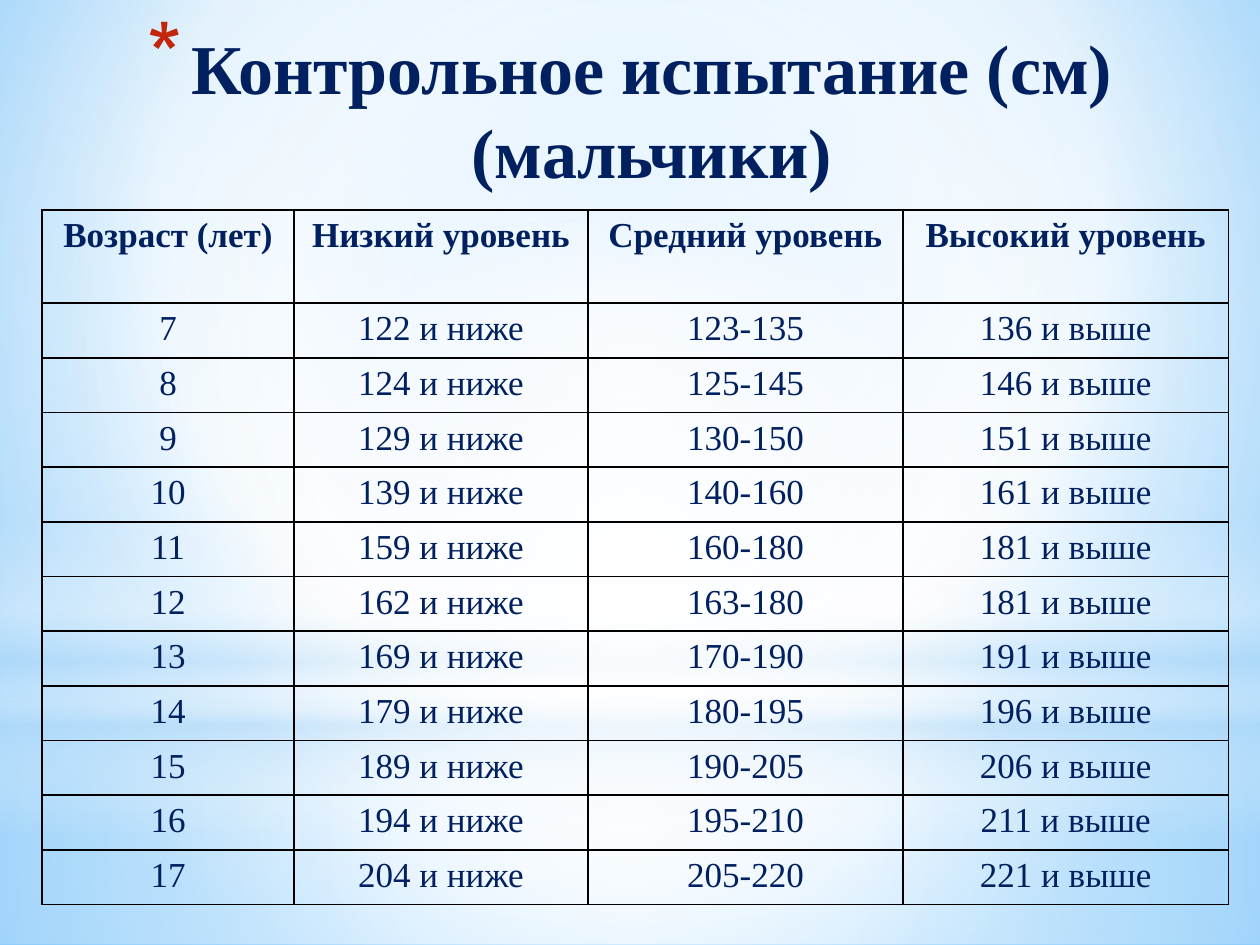
from dataclasses import dataclass
from typing import Any, NamedTuple

from pptx import Presentation
from pptx.dml.color import RGBColor as RGB
from pptx.enum.shapes import MSO_SHAPE as Kind
from pptx.enum.text import MSO_ANCHOR as Anchor, PP_ALIGN as Align
from pptx.oxml import parse_xml
from pptx.oxml.ns import nsdecls, qn
from pptx.util import Pt


@dataclass(frozen=True)
class Theme:
    font: str = "Times New Roman"
    ink: str = "002060"
    star: str = "C3260C"
    rule: str = "000000"
    white: str = "FFFFFF"
    sky: str = "B4DCFA"
    rim: str = "9ED5FF"
    deep: str = "5BB9FF"
    head: int = 40
    body: int = 20


class Stop(NamedTuple):
    pos: int
    tint: str
    alpha: int = 100


class Glow(NamedTuple):
    stops: list[Stop]
    focus: tuple[int, ...] = (50, 50, 50, 50)
    angle: int | None = None


class Layer(NamedTuple):
    kind: Kind
    top: float
    high: float
    glow: Glow


class Level(NamedTuple):
    age: int
    low: int
    high: int

    def texts(self) -> list[str]:
        return [str(self.age), f"{self.low} и ниже",
                f"{self.low + 1}-{self.high - 1}", f"{self.high} и выше"]


T = Theme()
WIDE, HIGH = 720, 540

BACK = Glow([Stop(0, T.rim), Stop(60, T.white), Stop(100, T.deep)],
            (20, 10, 20, 60))
LAYERS = [
    Layer(Kind.RECTANGLE, 402, 138, Glow([
        Stop(0, T.white, 91), Stop(37, T.white, 76), Stop(100, T.sky, 79)])),
    Layer(Kind.RECTANGLE, 0, 402, Glow([
        Stop(0, T.white, 89), Stop(48, T.white, 62), Stop(100, T.sky, 79)])),
    Layer(Kind.RECTANGLE, 297, 180, Glow([
        Stop(0, T.white, 0), Stop(29, T.white, 30), Stop(45, T.sky, 40),
        Stop(55, T.white, 26), Stop(65, T.sky, 60), Stop(100, T.white, 0)],
        angle=90)),
    Layer(Kind.OVAL, 126, 402, Glow([Stop(0, T.white), Stop(56, T.white, 0)])),
]

HEADS = ["Возраст (лет)", "Низкий уровень", "Средний уровень", "Высокий уровень"]
LEVELS = [
    Level(7, 122, 136), Level(8, 124, 146), Level(9, 129, 151),
    Level(10, 139, 161), Level(11, 159, 181), Level(12, 162, 181),
    Level(13, 169, 191), Level(14, 179, 196), Level(15, 189, 206),
    Level(16, 194, 211), Level(17, 204, 221),
]
COLS = [144, 168, 180, 186]
ROWS = [53.25] + [31.2] * len(LEVELS)


def put(item: Any, form: dict[str, Any]) -> None:
    for name, value in form.items():
        setattr(item, name, value)


def blend(fill: Any, root: Any, glow: Glow) -> None:
    """Give the fill under root a gradient."""
    fill.solid()
    stops = "".join(
        f'<a:gs pos="{s.pos * 1000}"><a:srgbClr val="{s.tint}">'
        f'<a:alpha val="{s.alpha * 1000}"/></a:srgbClr></a:gs>'
        for s in glow.stops)
    if glow.angle is None:
        sides = " ".join(f'{side}="{n * 1000}"'
                         for side, n in zip("ltrb", glow.focus))
        shade = f'<a:path path="circle"><a:fillToRect {sides}/></a:path>'
    else:
        shade = f'<a:lin ang="{glow.angle * 60000}" scaled="0"/>'
    old = root.find(".//" + qn("a:solidFill"))
    old.getparent().replace(old, parse_xml(
        f'<a:gradFill {nsdecls("a")} rotWithShape="1">'
        f'<a:gsLst>{stops}</a:gsLst>{shade}</a:gradFill>'))


def write(frame: Any, text: str, size: int, bold: bool, hang: float) -> Any:
    """Set one centred paragraph with a hanging indent."""
    para = frame.paragraphs[0]
    para.alignment = Align.CENTER
    run = para.add_run()
    run.text = text
    put(run.font, {"name": T.font, "size": Pt(size), "bold": bold})
    run.font.color.rgb = RGB.from_string(T.ink)
    props = para._p.get_or_add_pPr()
    props.set("marL", str(Pt(hang)))
    props.set("indent", str(-Pt(hang)))
    return props


def paint(slide: Any, layer: Layer) -> None:
    shape = slide.shapes.add_shape(
        layer.kind, 0, Pt(layer.top), Pt(WIDE), Pt(layer.high))
    shape.shadow.inherit = False
    shape.line.fill.background()
    blend(shape.fill, shape.element, layer.glow)


def title(slide: Any, text: str) -> None:
    box = slide.shapes.add_textbox(Pt(36), Pt(12.25), Pt(648), Pt(99.25))
    put(box.text_frame, {"word_wrap": True, "vertical_anchor": Anchor.MIDDLE})
    props = write(box.text_frame, text, T.head, True, 25.2)
    for mark in (f'<a:buClr {nsdecls("a")}><a:srgbClr val="{T.star}"/></a:buClr>',
                 f'<a:buSzPct {nsdecls("a")} val="128000"/>',
                 f'<a:buChar {nsdecls("a")} char="*"/>'):
        props.append(parse_xml(mark))


def border(cell: Any) -> None:
    props = cell._tc.get_or_add_tcPr()
    for spot, side in enumerate(("lnL", "lnR", "lnT", "lnB")):
        props.insert(spot, parse_xml(
            f'<a:{side} {nsdecls("a")} w="{Pt(1)}"><a:solidFill>'
            f'<a:srgbClr val="{T.rule}"/></a:solidFill></a:{side}>'))


def grid(slide: Any, rows: list[list[str]]) -> None:
    table = slide.shapes.add_table(
        len(rows), len(COLS), Pt(24), Pt(120),
        Pt(sum(COLS)), Pt(sum(ROWS))).table
    put(table, {"first_row": False, "horz_banding": False})
    for col, wide in zip(table.columns, COLS):
        col.width = Pt(wide)
    for row, high in zip(table.rows, ROWS):
        row.height = Pt(high)
    for r, texts in enumerate(rows):
        for c, text in enumerate(texts):
            cell = table.cell(r, c)
            cell.fill.background()
            border(cell)
            write(cell.text_frame, text, T.body, r == 0, 27)


def main() -> None:
    deck = Presentation()
    put(deck, {"slide_width": Pt(WIDE), "slide_height": Pt(HIGH)})
    slide = deck.slides.add_slide(deck.slide_layouts[6])

    # Sky background
    blend(slide.background.fill, slide.element, BACK)
    for layer in LAYERS:
        paint(slide, layer)

    # Heading and table of levels
    title(slide, "Контрольное испытание (см) (мальчики)")
    grid(slide, [HEADS] + [level.texts() for level in LEVELS])

    deck.save("out.pptx")


if __name__ == "__main__":
    main()
